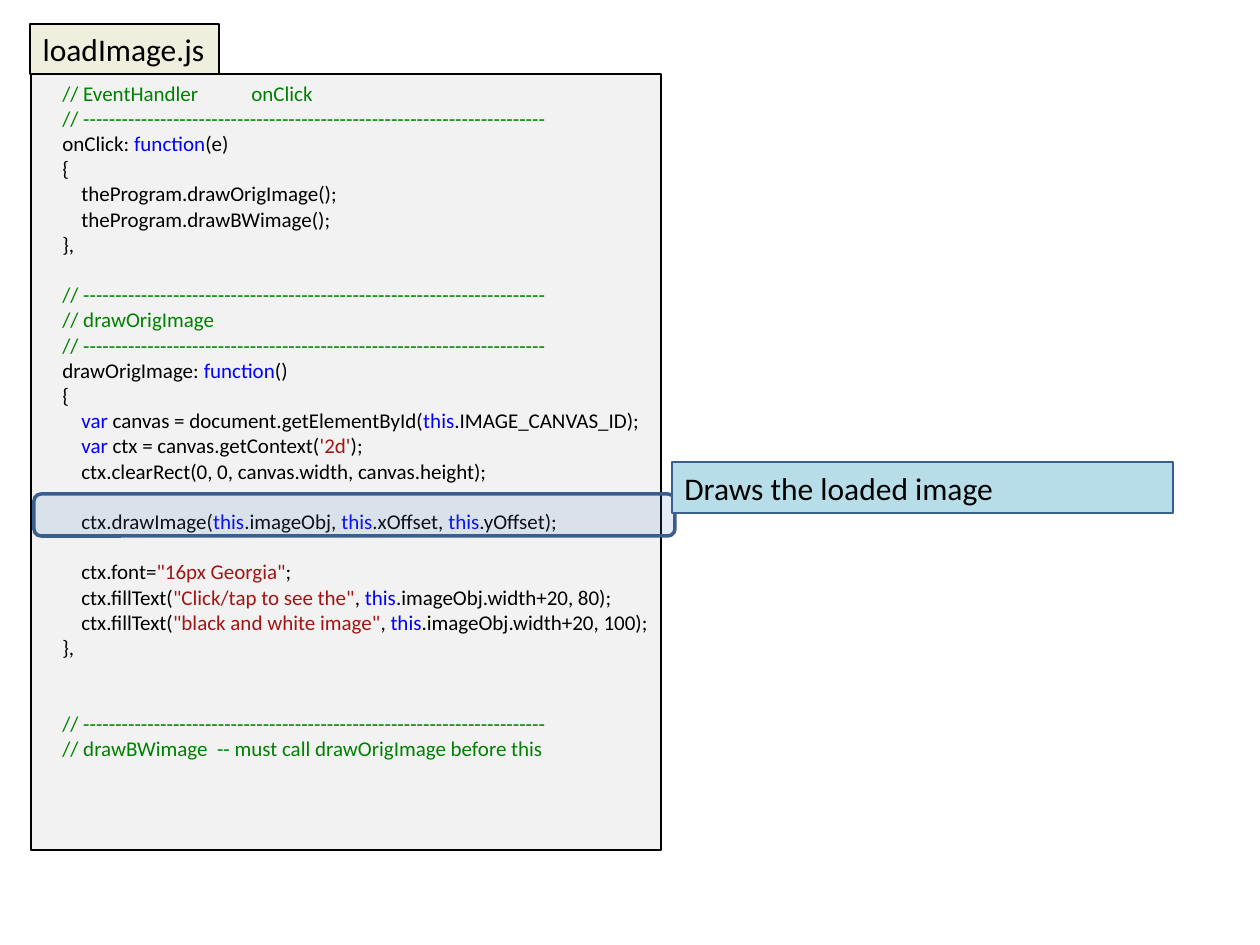
"""Build a code walkthrough slide for loadImage.js with the drawing call highlighted."""
from lxml import etree
from pptx import Presentation
from pptx.dml.color import RGBColor
from pptx.enum.shapes import MSO_SHAPE as Preset
from pptx.enum.text import MSO_ANCHOR as Anchor, PP_ALIGN as Align
from pptx.oxml.ns import qn
from pptx.util import Emu, Pt

BLACK = RGBColor(0x00, 0x00, 0x00)
TAB_CREAM = RGBColor(0xEF, 0xEF, 0xDD)
PANEL_GREY = RGBColor(0xF2, 0xF2, 0xF2)
ACCENT = RGBColor(0x4F, 0x81, 0xBD)
ACCENT_DARK = RGBColor(0x3A, 0x5F, 0x8C)
NOTE_BLUE = RGBColor(0xB7, 0xDE, 0xE8)
COMMENT = RGBColor(0x00, 0x80, 0x00)
KEYWORD = RGBColor(0x00, 0x00, 0xFF)
STRING = RGBColor(0xA3, 0x15, 0x15)

KEYWORDS = {"this", "var", "function"}
RULE = "// " + "-" * 72
LINE_PT = 14.4
INDENT = 19
TAB_STOP = 367

CODE = [
    (0, 1, "// EventHandler\tonClick"),
    (0, 1, RULE),
    (0, 1, "onClick: |function|(e)"),
    (0, 1, "{"),
    (0, 2, "theProgram.drawOrigImage();"),
    (0, 2, "theProgram.drawBWimage();"),
    (0, 1, "},"),
    (1, 1, RULE),
    (0, 1, "// drawOrigImage"),
    (0, 1, RULE),
    (0, 1, "drawOrigImage: |function|()"),
    (0, 1, "{"),
    (0, 2, "var| canvas = document.getElementById(|this|.IMAGE_CANVAS_ID);"),
    (0, 2, "var| ctx = canvas.getContext(|'2d'|);"),
    (0, 2, "ctx.clearRect(0, 0, canvas.width, canvas.height);"),
    (1, 2, "ctx.drawImage(|this|.imageObj, |this|.xOffset, |this|.yOffset);"),
    (1, 2, 'ctx.font=|"16px Georgia"|;'),
    (0, 2, 'ctx.fillText(|"Click/tap to see the"|, |this|.imageObj.width+20, 80);'),
    (0, 2, 'ctx.fillText(|"black and white image"|, |this|.imageObj.width+20, 100);'),
    (0, 1, "},"),
    (2, 1, RULE),
    (0, 1, "// drawBWimage  -- must call drawOrigImage before this"),
]


def px(length):
    return Emu(round(length * 914400 / 126))


def token_color(token):
    if token.startswith("//"):
        return COMMENT
    if token in KEYWORDS:
        return KEYWORD
    return STRING if token[0] in "'\"" else BLACK


deck = Presentation()
deck.slide_width, deck.slide_height = px(1260), px(945)
slide = deck.slides.add_slide(deck.slide_layouts[5])

file_tab = slide.shapes.title
for side, length in {"left": 30, "top": 24, "width": 189, "height": 50}.items():
    setattr(file_tab, side, px(length))
code_panel = slide.shapes.add_shape(Preset.RECTANGLE, px(31), px(74), px(630), px(776))
highlight = slide.shapes.add_shape(Preset.ROUNDED_RECTANGLE, px(34), px(494), px(641), px(42))
callout = slide.shapes.add_shape(Preset.RECTANGLE, px(672), px(462), px(501), px(51))

for part, fill, outline, weight in [
    (file_tab, TAB_CREAM, BLACK, 0.75),
    (code_panel, PANEL_GREY, BLACK, 0.75),
    (highlight, ACCENT, ACCENT_DARK, 2),
    (callout, NOTE_BLUE, ACCENT_DARK, 0.75),
]:
    part.fill.solid()
    part.fill.fore_color.rgb = fill
    part.line.color.rgb = outline
    part.line.width = Pt(weight)
    if part is not file_tab:
        part.shadow.inherit = False

highlight_color = highlight.fill._xPr.find(qn("a:solidFill"))[0]
etree.SubElement(highlight_color, qn("a:alpha"), val="15000")

for part, label, wrap in [(file_tab, "loadImage.js", False), (callout, "Draws the loaded image", True)]:
    frame = part.text_frame
    frame.text = label
    frame.word_wrap = wrap
    frame.vertical_anchor = Anchor.MIDDLE
    line = frame.paragraphs[0]
    line.alignment = Align.LEFT
    for attribute, value in {"name": "Calibri", "size": Pt(18)}.items():
        setattr(line.font, attribute, value)
    line.font.color.rgb = BLACK

listing = code_panel.text_frame
for attribute, value in {"word_wrap": True, "vertical_anchor": Anchor.TOP, "margin_right": 0}.items():
    setattr(listing, attribute, value)
for number, (gap, level, code) in enumerate(CODE):
    line = listing.add_paragraph() if number else listing.paragraphs[0]
    line.alignment = Align.LEFT
    line.space_before = Pt(gap * LINE_PT)
    properties = line._p.get_or_add_pPr()
    properties.set("marL", str(px(level * INDENT)))
    properties.set("indent", "0")
    if "\t" in code:
        stops = etree.SubElement(properties, qn("a:tabLst"))
        etree.SubElement(stops, qn("a:tab"), pos=str(px(TAB_STOP)), algn="l")
    for token in code.split("|"):
        run = line.add_run()
        run.text = token
        for attribute, value in {"name": "Calibri", "size": Pt(12)}.items():
            setattr(run.font, attribute, value)
        run.font.color.rgb = token_color(token)

deck.save("out.pptx")
